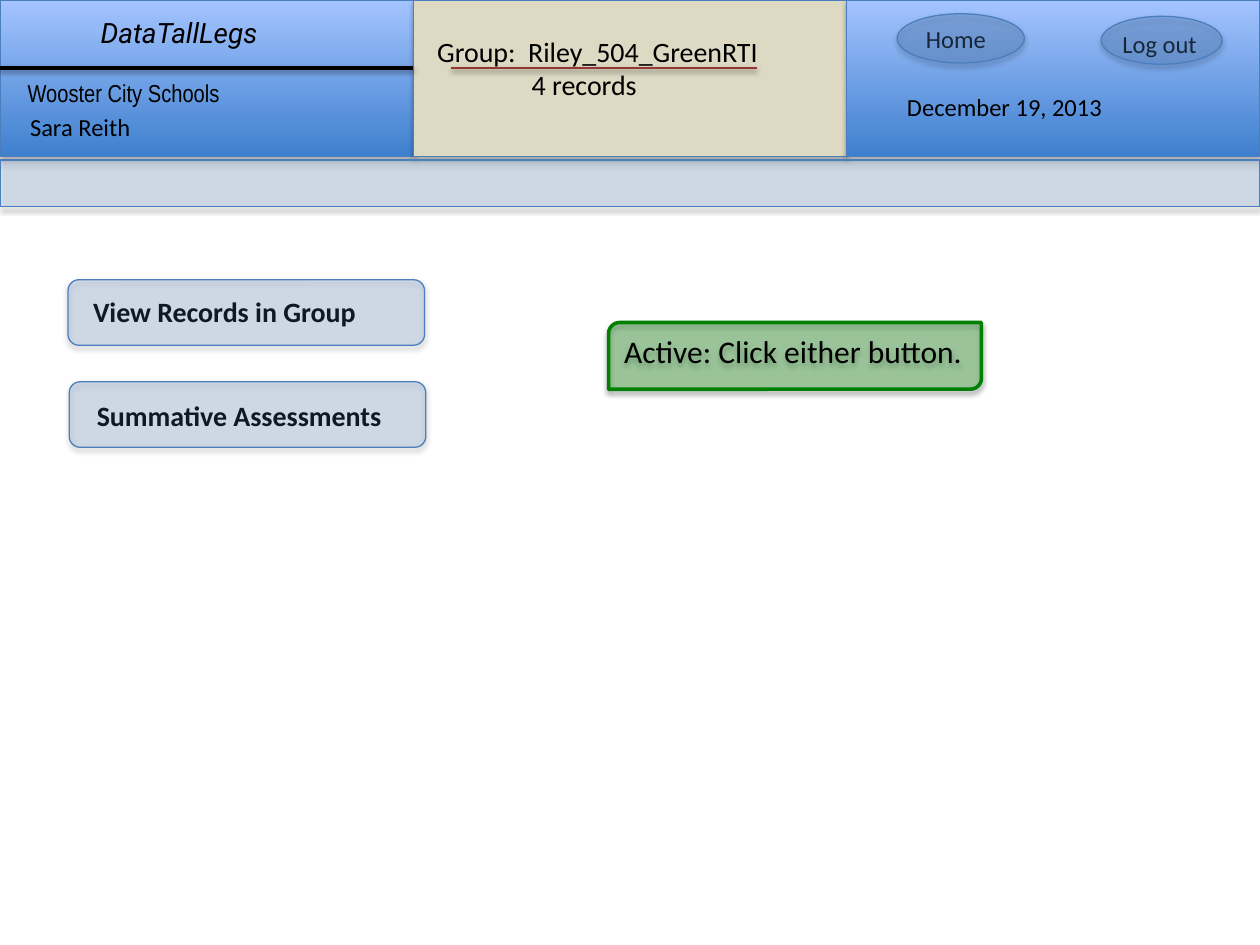
import pptx
import pptx.util
import pptx.dml.color
import pptx.enum.shapes
import pptx.enum.text
import pptx.oxml
import pptx.oxml.ns
from dataclasses import dataclass

Inches = pptx.util.Inches
Pt = pptx.util.Pt
RGB = pptx.dml.color.RGBColor.from_string
Kind = pptx.enum.shapes.MSO_SHAPE
NS = pptx.oxml.ns.nsdecls("a")


@dataclass
class Theme:
    ink: str = "000000"
    blue: str = "4F81BD"
    edge: str = "4B7EBC"
    deep: str = "3F80CE"
    pale: str = "A4C4FF"
    tan: str = "DDD9C3"
    red: str = "953735"
    green: str = "008000"
    font: str = "Calibri"
    small: int = 14
    mid: int = 16
    large: int = 18


theme = Theme()


def write(shape, text, size=theme.small, font=theme.font, bold=False,
          italic=False, indent=0, after=0):
    """Fill a shape with lines of text; indent applies to lines after the first."""
    frame = shape.text_frame
    frame.word_wrap = True
    frame.auto_size = pptx.enum.text.MSO_AUTO_SIZE.NONE
    frame.vertical_anchor = pptx.enum.text.MSO_ANCHOR.TOP
    frame.text = text
    for i, para in enumerate(frame.paragraphs):
        if i and indent:
            props = para._p.get_or_add_pPr()
            props.set("marL", str(Inches(indent)))
            props.set("indent", "0")
        para.alignment = pptx.enum.text.PP_ALIGN.LEFT
        para.space_before = Pt(0)
        para.space_after = Pt(after)
        para.line_spacing = 1.0
        para.font.name = font
        para.font.size = Pt(size)
        para.font.bold = bold
        para.font.italic = italic
        para.font.color.rgb = RGB(theme.ink)


def finish(shape, color, width, alpha=None, dist=1.8, dim=35):
    """Set the outline, the soft shadow below and, if given, the fill's opacity."""
    shape.line.color.rgb = RGB(color)
    shape.line.width = Pt(width)
    props = shape.element.spPr
    if alpha:
        tint = props.find(pptx.oxml.ns.qn("a:solidFill"))[0]
        tint.append(pptx.oxml.parse_xml(f'<a:alpha {NS} val="{alpha * 1000}"/>'))
    props.append(pptx.oxml.parse_xml(
        f'<a:effectLst {NS}><a:outerShdw blurRad="{Pt(3.1)}" dist="{Pt(dist)}" '
        f'dir="5400000" rotWithShape="0"><a:srgbClr val="{theme.ink}">'
        f'<a:alpha val="{dim * 1000}"/></a:srgbClr></a:outerShdw></a:effectLst>'))


deck = pptx.Presentation()
deck.slide_width, deck.slide_height = Inches(10), Inches(7.5)
slide = deck.slides.add_slide(deck.slide_layouts[5])
shapes = slide.shapes

# Header panels
for left, width, color in [(0, 3.28, None), (3.28, 3.44, theme.tan), (6.72, 3.28, None)]:
    panel = shapes.add_shape(Kind.RECTANGLE, Inches(left), 0, Inches(width), Inches(1.24))
    if color:
        panel.fill.solid()
        panel.fill.fore_color.rgb = RGB(color)
    else:
        panel.fill.gradient()
        panel.fill.gradient_angle = 90
        for stop, shade in zip(panel.fill.gradient_stops, (theme.deep, theme.pale)):
            stop.color.rgb = RGB(shade)
    finish(panel, theme.edge, 0.75)

# Group name, placed above the panels
title = shapes.title
title.left, title.top = Inches(3.37), Inches(0.22)
title.width, title.height = Inches(3.08), Inches(0.64)
write(title, "Group:  Riley_504_GreenRTI\n4 records", size=theme.mid, indent=0.75)
panel.element.addnext(title.element)

# Labels; those of buttons lie under their tinted shapes
labels = [
    ("Sara Reith", 0.14, 0.84, 1.37, {}),
    ("Wooster City Schools", 0.12, 0.57, 1.89, {"font": "Arial Narrow"}),
    ("DataTallLegs", 0.7, 0.07, 1.89, {"size": theme.mid, "font": "Roboto", "italic": True}),
    ("December 19, 2013", 7.1, 0.68, 1.87, {}),
    ("Home", 7.25, 0.14, 0.78, {}),
    ("Log out", 8.81, 0.18, 0.9, {}),
    ("View Records in Group", 0.64, 2.29, 2.64, {"size": theme.mid, "bold": True}),
    ("Summative Assessments", 0.67, 3.11, 2.6, {"size": theme.mid, "bold": True}),
]
for text, left, top, width, style in labels:
    box = shapes.add_textbox(Inches(left), Inches(top), Inches(width), Inches(0.35))
    write(box, text, **style)

# Tinted buttons, menu bar and hint
tints = [
    (Kind.OVAL, 7.12, 0.11, 1.01, 0.39, 30),
    (Kind.OVAL, 8.74, 0.13, 0.96, 0.38, 30),
    (Kind.RECTANGLE, 0, 1.27, 10, 0.37, 20),
    (Kind.ROUNDED_RECTANGLE, 0.54, 2.22, 2.83, 0.52, 20),
    (Kind.ROUNDED_RECTANGLE, 0.55, 3.03, 2.83, 0.52, 20),
    (Kind.ROUND_2_DIAG_RECTANGLE, 4.83, 2.56, 2.96, 0.53, 32),
]
for kind, left, top, width, height, alpha in tints:
    hint = kind == Kind.ROUND_2_DIAG_RECTANGLE
    shape = shapes.add_shape(kind, Inches(left), Inches(top), Inches(width), Inches(height))
    shape.fill.solid()
    shape.fill.fore_color.rgb = RGB(theme.green if hint else theme.blue)
    finish(shape, theme.green if hint else theme.edge, 2 if hint else 0.75, alpha)
    if hint:
        write(shape, "Active: Click either button.", size=theme.large, after=6)

# Rules under the product name and the group name
for start, end, color, width in [(0, 3.28, theme.ink, 2), (3.58, 6.01, theme.red, 1.5)]:
    rule = shapes.add_connector(pptx.enum.shapes.MSO_CONNECTOR.STRAIGHT,
                                Inches(start), Inches(0.54), Inches(end), Inches(0.54))
    finish(rule, color, width, dist=1.6, dim=38)

deck.save("out.pptx")
